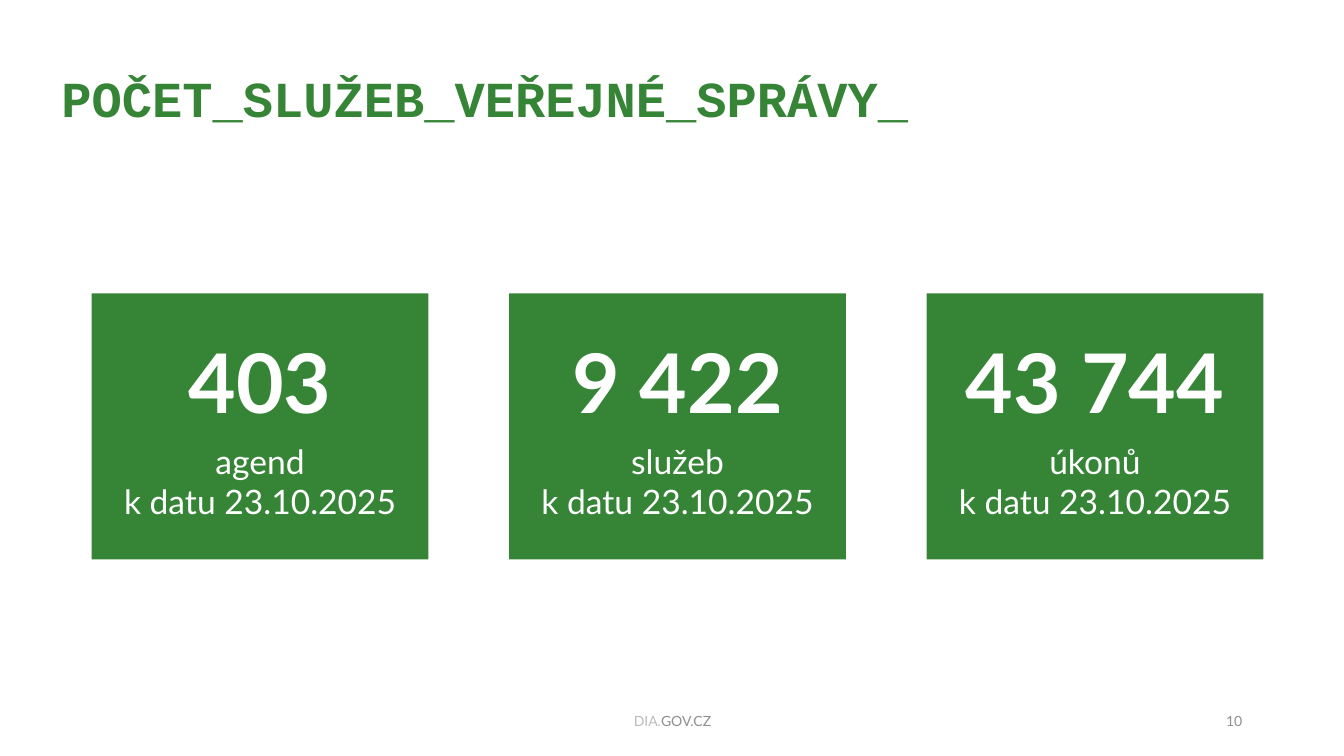
from pptx import Presentation
from pptx.dml.color import RGBColor
from pptx.enum.shapes import MSO_SHAPE
from pptx.enum.text import MSO_ANCHOR, PP_ALIGN
from pptx.util import Inches, Pt

COLORS = {
    "green": "368537",
    "white": "FFFFFF",
    "light_gray": "BDBCBC",
    "gray": "8F8F8F",
}

deck = Presentation()
deck.slide_width = Inches(13.33)
deck.slide_height = Inches(7.5)
page = deck.slides.add_slide(deck.slide_layouts[6])


def style_span(span, size, color, bold=False, font="Lato"):
    span.font.name = font
    span.font.size = Pt(size)
    span.font.bold = bold
    span.font.color.rgb = RGBColor.from_string(COLORS[color])


def add_line(left, top, width, height, align, spans):
    box = page.shapes.add_textbox(
        Inches(left), Inches(top), Inches(width), Inches(height))
    box.text_frame.word_wrap = True
    box.text_frame.vertical_anchor = MSO_ANCHOR.MIDDLE
    para = box.text_frame.paragraphs[0]
    para.alignment = align
    for text, *style in spans:
        span = para.add_run()
        span.text = text
        style_span(span, *style)
    return para


# Title
title = add_line(0.51, 0.28, 11.5, 1.45, PP_ALIGN.LEFT, [
    ("POČET_SLUŽEB_VEŘEJNÉ_SPRÁVY_", 36, "green", True, "Courier New")])
title.line_spacing = 0.9

# Three figure cards in equal columns
first_left, column_step = 0.91, 4.14
cards = [("403", "agend"), ("9 422", "služeb"), ("43 744", "úkonů")]
for column, (count, unit) in enumerate(cards):
    card = page.shapes.add_shape(
        MSO_SHAPE.RECTANGLE, Inches(first_left + column * column_step),
        Inches(2.91), Inches(3.34), Inches(2.64))
    card.shadow.inherit = False
    card.fill.solid()
    card.fill.fore_color.rgb = RGBColor.from_string(COLORS["green"])
    card.line.fill.background()
    frame = card.text_frame
    frame.word_wrap = True
    frame.vertical_anchor = MSO_ANCHOR.MIDDLE
    frame.text = f"{count}\n{unit}\nk datu 23.10.2025"
    for row, para in enumerate(frame.paragraphs):
        para.alignment = PP_ALIGN.CENTER
        style_span(para.runs[0], 24 if row else 58.7, "white", bold=row == 0)
    frame.paragraphs[0].space_after = Pt(8)

# Footer and page number
add_line(4.42, 6.95, 4.5, 0.4, PP_ALIGN.CENTER, [
    ("DIA.", 10, "light_gray"), ("GOV.CZ", 10, "gray")])
add_line(9.42, 6.95, 3, 0.4, PP_ALIGN.RIGHT, [("10", 10, "gray")])

deck.save("out.pptx")
